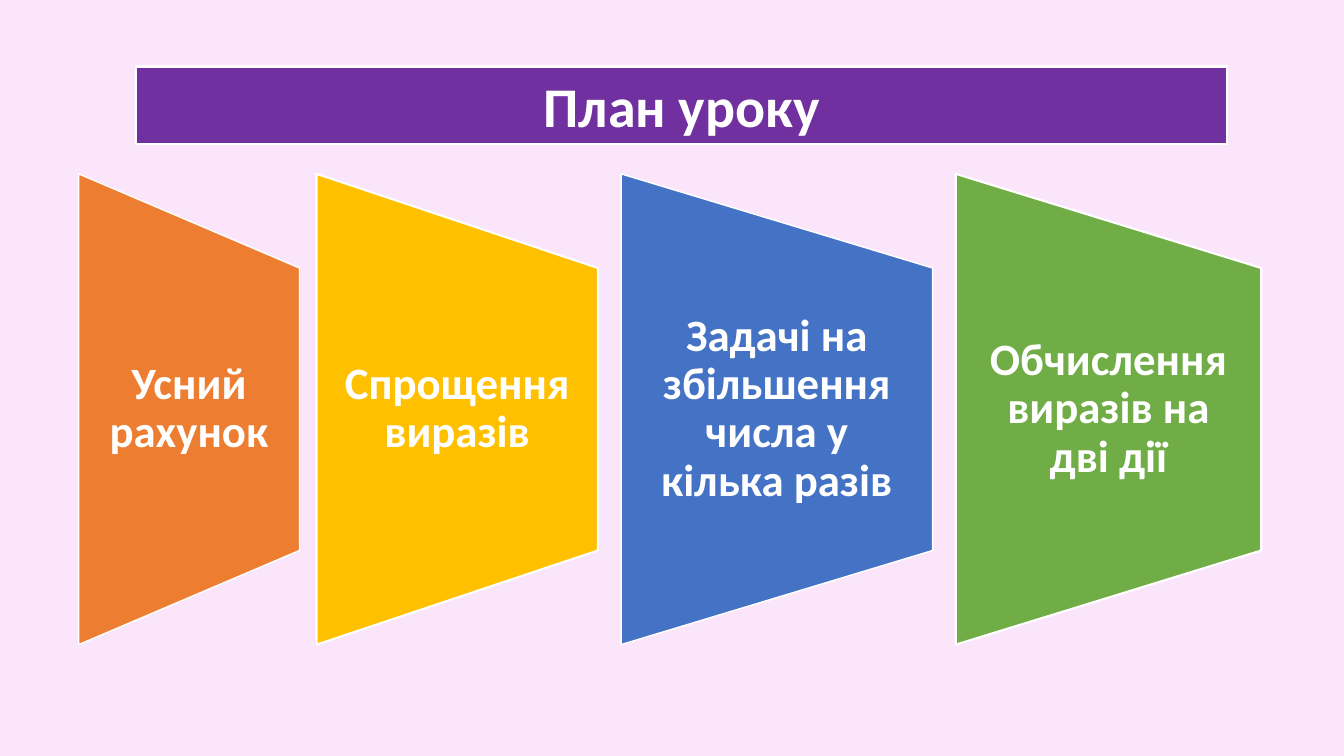
from pptx import Presentation
from pptx.dml.color import RGBColor
from pptx.enum.shapes import MSO_SHAPE
from pptx.enum.text import MSO_ANCHOR, PP_ALIGN
from pptx.util import Inches, Pt

RECTANGLE = MSO_SHAPE.RECTANGLE
TRAPEZOID = MSO_SHAPE.FLOWCHART_MANUAL_OPERATION
MIDDLE = MSO_ANCHOR.MIDDLE
CENTER = PP_ALIGN.CENTER

FONT = "Calibri"
WHITE = "FFFFFF"
BACKGROUND = "FBE5FB"
PURPLE = "7030A0"

STEP_CENTER_Y = 4.06
STEP_HEIGHT = 4.67
LABEL_HEIGHT = 2.8

# Lesson steps: text, left, width, fill, outline width
STEPS = [
    ("Усний рахунок", 0.78, 2.19, "ED7D31", 1),
    ("Спрощення виразів", 3.14, 2.79, "FFC000", 1.5),
    ("Задачі на збільшення числа у кілька разів", 6.16, 3.09, "4472C4", 1),
    ("Обчислення виразів на дві дії", 9.48, 3.03, "70AD47", 1.5),
]


def color(value):
    return RGBColor.from_string(value)


def write(frame, text, size=32, spacing=None, inset=None):
    frame.word_wrap = True
    frame.vertical_anchor = MIDDLE
    if inset is not None:
        frame.margin_left = frame.margin_right = Inches(inset)
        frame.margin_top = frame.margin_bottom = 0
    paragraph = frame.paragraphs[0]
    paragraph.alignment = CENTER
    paragraph.line_spacing = spacing
    run = paragraph.add_run()
    run.text = text
    run.font.name = FONT
    run.font.size = Pt(size)
    run.font.bold = True
    run.font.color.rgb = color(WHITE)


class LessonSlide:
    def __init__(self, presentation):
        self.slide = presentation.slides.add_slide(presentation.slide_layouts[6])
        fill = self.slide.background.fill
        fill.solid()
        fill.fore_color.rgb = color(BACKGROUND)

    def shape(self, kind, left, top, width, height, fill, line_width):
        shape = self.slide.shapes.add_shape(
            kind, Inches(left), Inches(top), Inches(width), Inches(height))
        shape.shadow.inherit = False
        shape.fill.solid()
        shape.fill.fore_color.rgb = color(fill)
        shape.line.color.rgb = color(WHITE)
        shape.line.width = Pt(line_width)
        return shape

    def title(self, text):
        banner = self.shape(RECTANGLE, 1.35, 0.66, 10.82, 0.77, PURPLE, 1.5)
        write(banner.text_frame, text, size=40)

    def step(self, text, left, width, fill, line_width):
        # The trapezoid lies on its side, so its length and breadth swap
        trapezoid = self.shape(
            TRAPEZOID, left + (width - STEP_HEIGHT) / 2, STEP_CENTER_Y - width / 2,
            STEP_HEIGHT, width, fill, line_width)
        trapezoid.rotation = 270
        label = self.slide.shapes.add_textbox(
            Inches(left), Inches(STEP_CENTER_Y - LABEL_HEIGHT / 2),
            Inches(width), Inches(LABEL_HEIGHT))
        write(label.text_frame, text, spacing=0.9, inset=0.22)


def main():
    presentation = Presentation()
    presentation.slide_width = Inches(13.33)
    presentation.slide_height = Inches(7.5)
    lesson = LessonSlide(presentation)

    # Heading
    lesson.title("План уроку")

    # Plan of the lesson
    for step in STEPS:
        lesson.step(*step)

    presentation.save("out.pptx")


if __name__ == "__main__":
    main()
